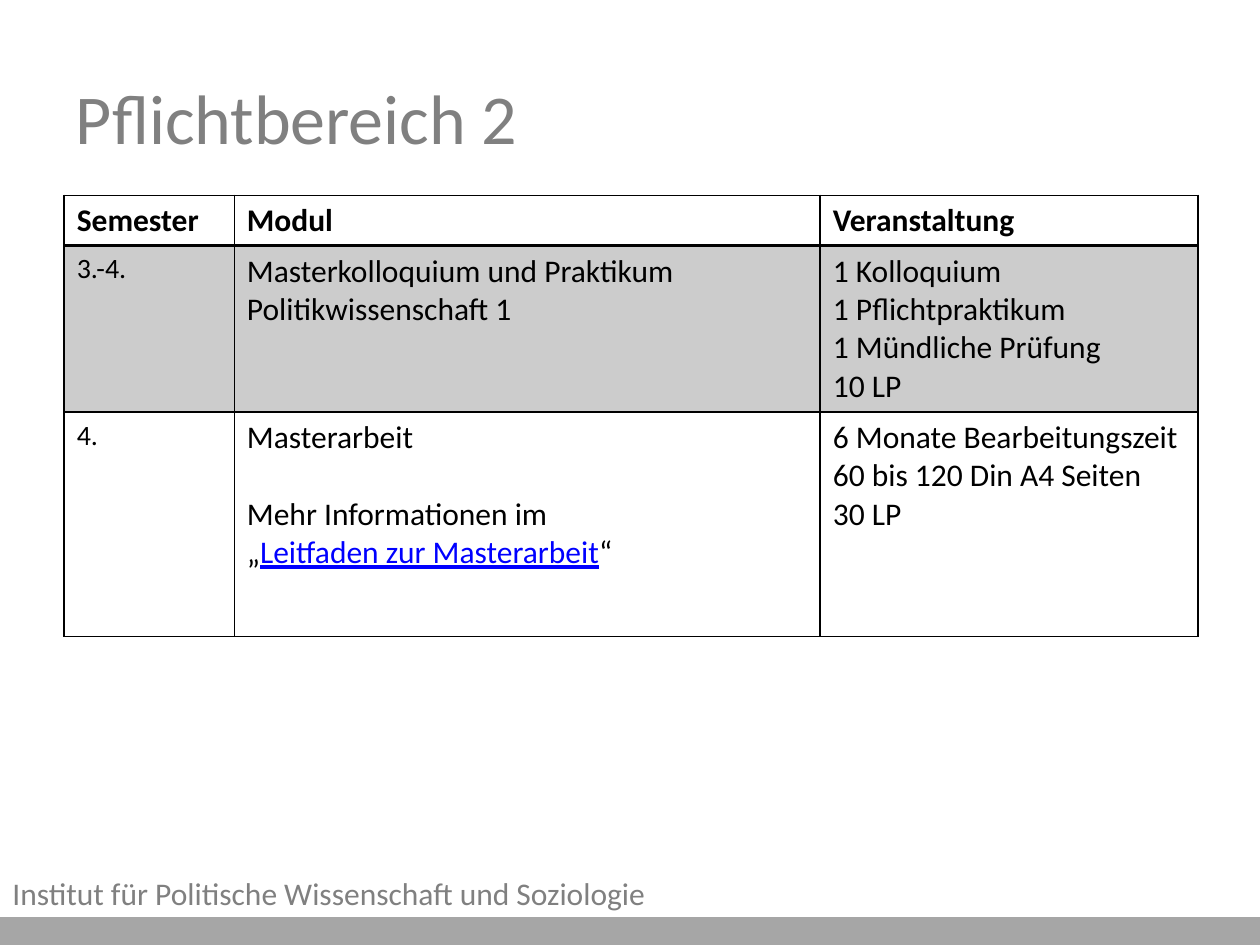
from lxml import etree
from pptx import Presentation
from pptx.dml.color import RGBColor
from pptx.enum.shapes import MSO_SHAPE
from pptx.enum.text import MSO_ANCHOR, PP_ALIGN
from pptx.oxml.ns import qn
from pptx.util import Inches, Pt

COLORS = {"text": "000000", "muted": "808080", "bar": "A6A6A6", "band": "CCCCCC", "link": "0000FF"}


def set_font(font, size, color, bold=False):
    font.name = "Calibri"
    font.size = Pt(size)
    font.bold = bold
    font.color.rgb = RGBColor.from_string(COLORS[color])


def set_border(cell, side, width):
    ln = etree.SubElement(cell._tc.get_or_add_tcPr(), qn(f"a:ln{side}"), w=str(Pt(width)))
    fill = etree.SubElement(ln, qn("a:solidFill"))
    etree.SubElement(fill, qn("a:srgbClr"), val=COLORS["text"])


prs = Presentation()
prs.slide_width, prs.slide_height = Inches(10), Inches(7.5)
s = prs.slides.add_slide(prs.slide_layouts[5])

# Footer bar and institute name
bar = s.shapes.add_shape(MSO_SHAPE.RECTANGLE, Inches(0), Inches(7.29), Inches(10), Inches(0.21))
bar.shadow.inherit = False
bar.fill.solid()
bar.fill.fore_color.rgb = RGBColor.from_string(COLORS["bar"])
bar.line.color.rgb = RGBColor.from_string(COLORS["bar"])
bar.line.width = Pt(2)

footer = s.shapes.add_textbox(Inches(0), Inches(6.89), Inches(7.09), Inches(0.4))
tf = footer.text_frame
tf.word_wrap = True
tf.text = "Institut für Politische Wissenschaft und Soziologie"
set_font(tf.paragraphs[0].font, 18, "muted")

# Title
title = s.shapes.title
title.left, title.top, title.width, title.height = Inches(0.5), Inches(0.3), Inches(9), Inches(1.25)
tf = title.text_frame
tf.text = "Pflichtbereich 2"
tf.vertical_anchor = MSO_ANCHOR.MIDDLE
p = tf.paragraphs[0]
p.alignment = PP_ALIGN.LEFT
set_font(p.font, 40, "muted")

# Module table
rows = [
    ["Semester", "Modul", "Veranstaltung"],
    ["3.-4.", "Masterkolloquium und Praktikum Politikwissenschaft 1",
     "1 Kolloquium\n1 Pflichtpraktikum\n1 Mündliche Prüfung\n10 LP"],
    ["4.", "Masterarbeit\nMehr Informationen im\n„",
     "6 Monate Bearbeitungszeit\n60 bis 120 Din A4 Seiten\n30 LP"],
]
table = s.shapes.add_table(3, 3, Inches(0.51), Inches(1.55), Inches(9), Inches(3.5)).table
table.first_row = table.horz_banding = False
for column, width in zip(table.columns, (1.35, 4.65, 3)):
    column.width = Inches(width)
for row, height in zip(table.rows, (0.4, 1.32, 1.78)):
    row.height = Inches(height)

for i, texts in enumerate(rows):
    for j, text in enumerate(texts):
        cell = table.cell(i, j)
        # The rule below the header is heavier
        for side in "LRTB":
            set_border(cell, side, 2 if (i, side) in ((0, "B"), (1, "T")) else 1)
        if i == 1:
            cell.fill.solid()
            cell.fill.fore_color.rgb = RGBColor.from_string(COLORS["band"])
        else:
            cell.fill.background()
        cell.text = text
        for p in cell.text_frame.paragraphs:
            set_font(p.font, 16 if i > 0 and j == 0 else 18, "text", bold=i == 0)

# Thesis guide reference, set one line apart from the module name
_, info, guide = table.cell(2, 1).text_frame.paragraphs
info.space_before = Pt(22)
r = guide.add_run()
r.text = "Leitfaden zur Masterarbeit"
r.font.underline = True
r.font.color.rgb = RGBColor.from_string(COLORS["link"])
guide.add_run().text = "“"

prs.save("out.pptx")
